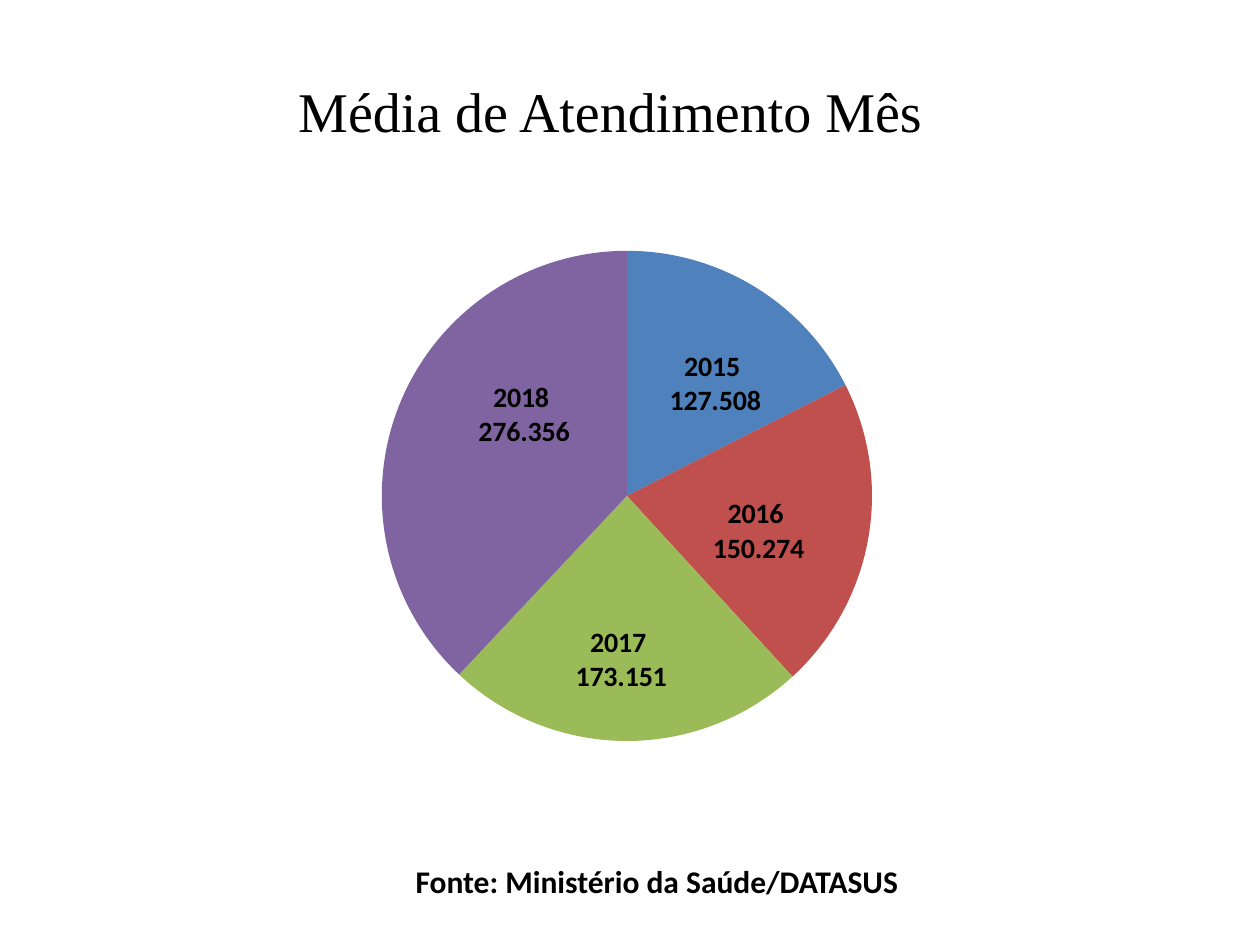
from lxml import etree
from pptx import Presentation
from pptx import util as u
from pptx.chart.data import CategoryChartData
from pptx.dml.color import RGBColor
from pptx.enum import chart as ch, text
from pptx.oxml import parse_xml
from pptx.oxml.ns import nsdecls, qn

COLORS = {"text": "000000", "2015": "4F81BD", "2016": "C0504D",
          "2017": "9BBB59", "2018": "8064A2"}
VALUES = {"2015": 127508, "2016": 150274, "2017": 173151, "2018": 276356}
LABELS = ["2015 \n127.508", "2016\n 150.274", "2017\n 173.151", "2018\n 276.356"]
SHIFTS = [(0.03, -0.01), (0.01, 0.02), (-0.01, 0.06), (0.01, -0.05)]


def style(font, **fmt):
    for k, v in fmt.items():
        setattr(font, k, v)
    font.color.rgb = RGBColor.from_string(COLORS["text"])


def layout(x, y, size=None):
    el = parse_xml(f"<c:layout {nsdecls('c')}><c:manualLayout/></c:layout>")
    vals = {"x": x, "y": y}
    if size:
        vals = {"layoutTarget": "inner", "xMode": "edge", "yMode": "edge",
                **vals, "w": size[0], "h": size[1]}
    for k, v in vals.items():
        etree.SubElement(el[0], qn(f"c:{k}")).set("val", str(v))
    return el


prs = Presentation()
prs.slide_width, prs.slide_height = u.Inches(10), u.Inches(7.5)
s = prs.slides.add_slide(prs.slide_layouts[5])

title = s.shapes.title
box = {"left": 2.14, "top": 0.55, "width": 5.41, "height": 0.64}
for k, v in box.items():
    setattr(title, k, u.Inches(v))
p = title.text_frame.paragraphs[0]
p.alignment = text.PP_ALIGN.CENTER
r = p.add_run()
r.text = "Média de Atendimento Mês"
style(r.font, name="Times New Roman", size=u.Pt(32))

data = CategoryChartData(number_format="#,##0")
data.categories = list(VALUES)
data.add_series("Series 1", list(VALUES.values()))
chart = s.shapes.add_chart(ch.XL_CHART_TYPE.PIE, u.Inches(1.62), u.Inches(1.11),
                           u.Inches(6.41), u.Inches(5.57), data).chart
chart.has_title = chart.has_legend = False
style(chart.font, name="Calibri", size=u.Pt(10))

plot = chart.plots[0]
plot.vary_by_categories = True
ser = plot.series[0]
labels = ser.data_labels
labels.show_value = labels.show_category_name = True
labels.show_percentage = False
labels.position = ch.XL_LABEL_POSITION.CENTER
style(labels.font, name="Calibri", size=u.Pt(16), bold=True)

for i, (year, label) in enumerate(zip(VALUES, LABELS)):
    pt = ser.points[i]
    pt.format.fill.solid()
    pt.format.fill.fore_color.rgb = RGBColor.from_string(COLORS[year])
    tf = pt.data_label.text_frame
    tf.text = label
    pt.data_label.position = ch.XL_LABEL_POSITION.CENTER
    for p in tf.paragraphs:
        style(p.runs[0].font, name="Calibri", size=u.Pt(16), bold=True)

root = ser._element.getroottree().getroot()
area = root.find(".//" + qn("c:plotArea"))
for old in area.findall(qn("c:layout")):
    area.remove(old)
area.insert(0, layout(0.22, 0.015, (0.607, 0.985)))
for lbl, shift in zip(root.iter(qn("c:dLbl")), SHIFTS):
    lbl.insert(1, layout(*shift))
    lbl.find(qn("c:showCatName")).set("val", "1")
for lines in root.iter(qn("c:showLeaderLines")):
    lines.set("val", "0")

sp = s.shapes.add_textbox(u.Inches(3.2), u.Inches(6.79), u.Inches(5.5), u.Inches(0.71))
tf = sp.text_frame
tf.word_wrap = True
r = tf.paragraphs[0].add_run()
r.text = "Fonte: Ministério da Saúde/DATASUS"
style(r.font, name="Calibri", size=u.Pt(18), bold=True)

prs.save("out.pptx")
